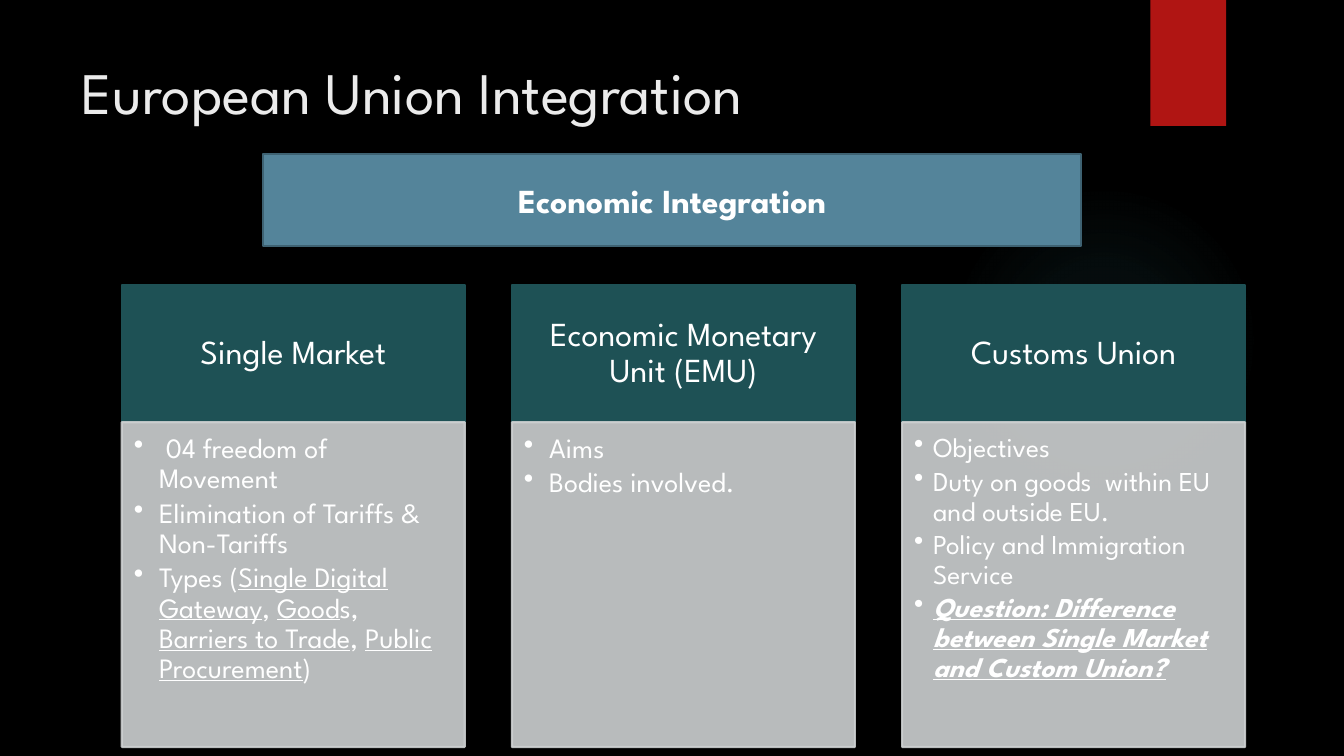
from dataclasses import dataclass

from lxml.etree import SubElement
from pptx import Presentation
from pptx.dml.color import RGBColor
from pptx.enum.shapes import MSO_SHAPE
from pptx.enum.text import MSO_ANCHOR, PP_ALIGN
from pptx.oxml import parse_xml
from pptx.oxml.ns import nsdecls, qn
from pptx.util import Pt


@dataclass(frozen=True)
class Theme:
    face: str = "League Spartan"
    background: str = "000000"
    ribbon: str = "B01513"
    glow: str = "50B9C1"
    banner: str = "54849A"
    banner_edge: str = "3E6272"
    heading: str = "1E5155"
    panel: str = "CDD0D1"
    title_text: str = "EBEBEB"
    text: str = "FFFFFF"
    title_size: float = 42
    heading_size: float = 24
    body_size: float = 20
    small_body_size: float = 19.5


THEME = Theme()
LINK = {"underline": True}
QUESTION = {"bold": True, "italic": True, "underline": True}

# Heading, body size, bullet indent, bullets as lists of (words, font format)
PILLARS = [
    ("Single Market", THEME.body_size, 18, [
        [(" 04 freedom of Movement", {})],
        [("Elimination of Tariffs & Non-Tariffs", {})],
        [("Types (", {}), ("Single Digital Gateway", LINK), (", ", {}),
         ("Good", LINK), ("s, ", {}), ("Barriers to Trade", LINK), (", ", {}),
         ("Public Procurement", LINK), (")", {})],
    ]),
    ("Economic Monetary Unit (EMU)", THEME.body_size, 18, [
        [("Aims", {})],
        [("Bodies involved.", {})],
    ]),
    ("Customs Union", THEME.small_body_size, 13.5, [
        [("Objectives", {})],
        [("Duty on goods  within EU and outside EU.", {})],
        [("Policy and Immigration Service", {})],
        [("Question: Difference between Single Market and Custom Union", QUESTION),
         ("?", QUESTION | {"size": Pt(THEME.body_size)})],
    ]),
]


def add_block(box, fill, edge=None, kind=MSO_SHAPE.RECTANGLE, **frame_format):
    """Add a filled shape at box (points); return it with its text frame set up."""
    block = slide.shapes.add_shape(kind, *map(Pt, box))
    block.shadow.inherit = False
    block.fill.solid()
    block.fill.fore_color.rgb = RGBColor.from_string(fill)
    if edge:
        block.line.color.rgb = RGBColor.from_string(edge)
        block.line.width = Pt(1.5)
    else:
        block.line.fill.background()
    for name, value in frame_format.items():
        setattr(block.text_frame, name, value)
    return block


def write(paragraph, words, points, color=THEME.text, **font_format):
    """Add a run of words; font_format overrides the theme face and the point size."""
    run = paragraph.add_run()
    run.text = words
    run.font.color.rgb = RGBColor.from_string(color)
    for name, value in ({"name": THEME.face, "size": Pt(points)} | font_format).items():
        setattr(run.font, name, value)


deck = Presentation()
deck.slide_width, deck.slide_height = Pt(960), Pt(540)
slide = deck.slides.add_slide(deck.slide_layouts[5])
slide.background.fill.solid()
slide.background.fill.fore_color.rgb = RGBColor.from_string(THEME.background)

# Backdrop
glow = add_block((677.5, 131.8, 221.8, 221.8), THEME.glow, kind=MSO_SHAPE.OVAL)
stops = "".join(
    f'<a:gs pos="{position * 1000}"><a:srgbClr val="{THEME.glow}">'
    f'<a:alpha val="{opacity * 1000}"/></a:srgbClr></a:gs>'
    for position, opacity in ((0, 7), (36, 6), (69, 0)))
solid = glow._element.spPr.find(qn("a:solidFill"))
solid.getparent().replace(solid, parse_xml(
    f'<a:gradFill {nsdecls("a")}><a:gsLst>{stops}</a:gsLst><a:path path="circle">'
    '<a:fillToRect l="50000" t="50000" r="50000" b="50000"/></a:path></a:gradFill>'))
add_block((821.8, 0, 54, 90), THEME.ribbon)

# Title
title = slide.shapes.title
title.left, title.top, title.width, title.height = map(Pt, (51, 36, 741, 110))
title.text_frame.vertical_anchor = MSO_ANCHOR.TOP
title.text_frame.word_wrap = True
title_line = title.text_frame.paragraphs[0]
title_line.alignment = PP_ALIGN.LEFT
write(title_line, "European Union Integration", THEME.title_size, THEME.title_text)

# Banner
banner = add_block((187.8, 110, 584.6, 65.5), THEME.banner, THEME.banner_edge,
                   vertical_anchor=MSO_ANCHOR.MIDDLE)
banner_line = banner.text_frame.paragraphs[0]
banner_line.alignment = PP_ALIGN.CENTER
write(banner_line, "Economic Integration", THEME.heading_size, bold=True)

# Pillars
LEFT, PITCH, WIDTH = 87, 278.7, 245
HEADING_TOP, PANEL_TOP, PANEL_HEIGHT = 203.6, 301.6, 232
heading_frame = {
    "vertical_anchor": MSO_ANCHOR.MIDDLE, "word_wrap": True,
    "margin_left": Pt(13.4), "margin_right": Pt(13.4),
    "margin_top": Pt(7.7), "margin_bottom": Pt(7.7),
}
panel_frame = {
    "vertical_anchor": MSO_ANCHOR.TOP, "word_wrap": True,
    "margin_left": Pt(8.6), "margin_right": Pt(11.5),
    "margin_top": Pt(8.6), "margin_bottom": Pt(12.2),
}
heading_spacing = {"alignment": PP_ALIGN.CENTER, "line_spacing": 0.9, "space_after": Pt(8.4)}
bullet_spacing = {"alignment": PP_ALIGN.LEFT, "level": 1, "line_spacing": 0.9,
                  "space_after": Pt(3)}

for column, (name, body_size, indent, bullets) in enumerate(PILLARS):
    left = LEFT + column * PITCH
    heading = add_block((left, HEADING_TOP, WIDTH, PANEL_TOP - HEADING_TOP),
                        THEME.heading, THEME.heading, **heading_frame)
    heading_line = heading.text_frame.paragraphs[0]
    for key, value in heading_spacing.items():
        setattr(heading_line, key, value)
    write(heading_line, name, THEME.heading_size)

    panel = add_block((left, PANEL_TOP, WIDTH, PANEL_HEIGHT),
                      THEME.panel, THEME.panel, **panel_frame)
    for color in panel._element.spPr.iter(qn("a:srgbClr")):
        SubElement(color, qn("a:alpha"), val="90000")
    for number, pieces in enumerate(bullets):
        frame = panel.text_frame
        bullet = frame.add_paragraph() if number else frame.paragraphs[0]
        properties = bullet._p.get_or_add_pPr()
        properties.set("marL", str(Pt(indent)))
        properties.set("indent", str(-Pt(indent)))
        SubElement(properties, qn("a:buChar"), char="•")
        for key, value in bullet_spacing.items():
            setattr(bullet, key, value)
        for words, font_format in pieces:
            write(bullet, words, body_size, **font_format)

deck.save("out.pptx")
